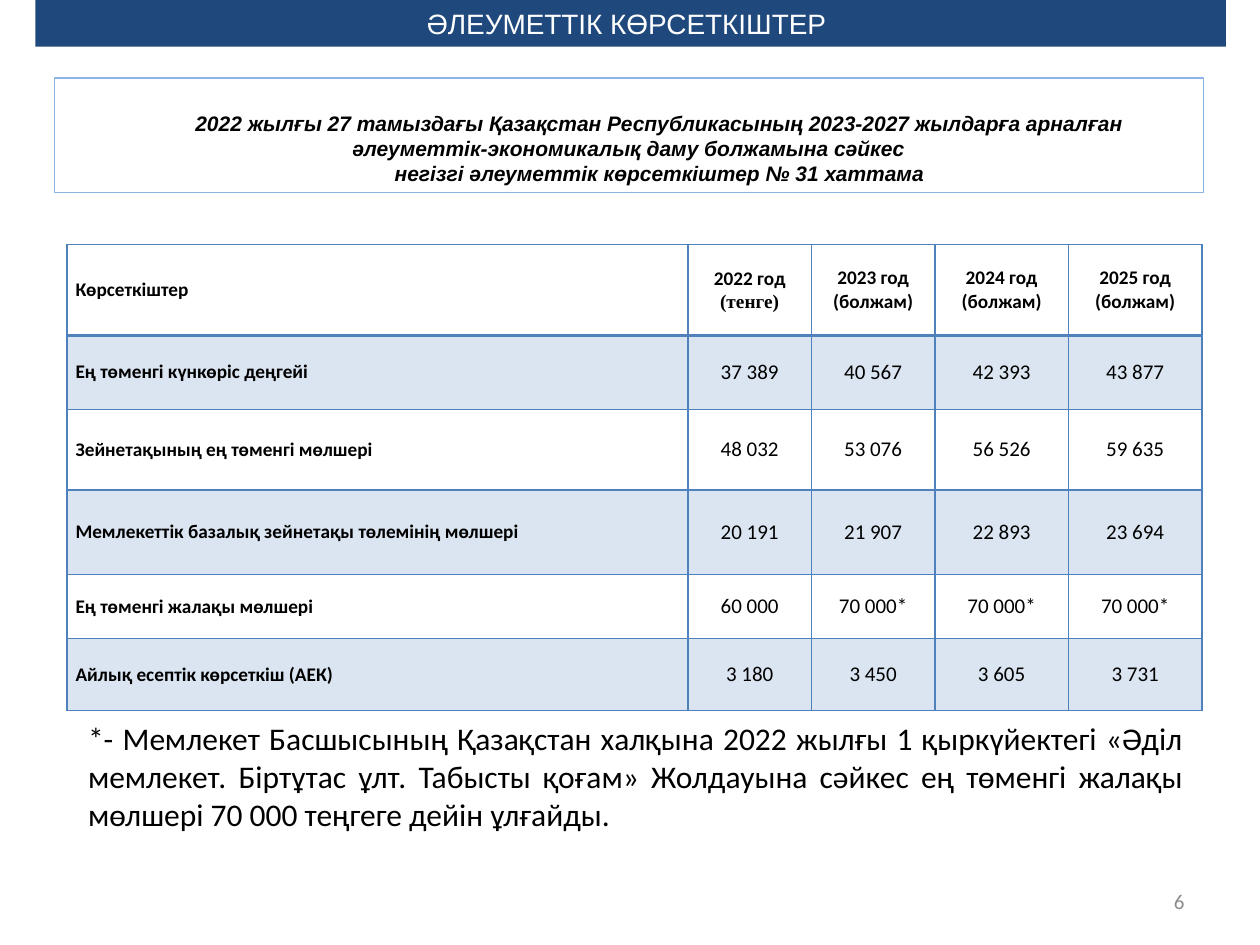
"""Build the slide of social indicators for 2022-2025."""
import lxml.etree
import pptx
import pptx.dml.color
import pptx.enum.shapes
import pptx.enum.text
import pptx.oxml.ns
import pptx.util

Inches = pptx.util.Inches
Pt = pptx.util.Pt
qn = pptx.oxml.ns.qn
Align = pptx.enum.text.PP_ALIGN
Anchor = pptx.enum.text.MSO_ANCHOR
Rectangle = pptx.enum.shapes.MSO_SHAPE.RECTANGLE

THEME = {
    "navy": "1F497D", "blue": "4F81BD", "pale": "8EB4E3",
    "black": "000000", "white": "FFFFFF", "grey": "8C8C8C",
    "title": 16, "note": 18, "body": 12, "label": 11,
}


def rgb(name):
    return pptx.dml.color.RGBColor.from_string(THEME[name])


def write(text_frame, lines, size, color="black", align=Align.LEFT, fonts=("Calibri",), **style):
    text_frame.word_wrap = True
    for index, line in enumerate(lines):
        paragraph = text_frame.paragraphs[0] if index == 0 else text_frame.add_paragraph()
        paragraph.alignment = align
        run = paragraph.add_run()
        run.text = line
        formats = {"size": Pt(THEME[size]), "name": fonts[min(index, len(fonts) - 1)], **style}
        for attribute, value in formats.items():
            setattr(run.font, attribute, value)
        run.font.color.rgb = rgb(color)


presentation = pptx.Presentation()
presentation.slide_width = Inches(10)
presentation.slide_height = Inches(7.5)
slide = presentation.slides.add_slide(presentation.slide_layouts[6])

number = slide.shapes.add_textbox(Inches(7.17), Inches(6.95), Inches(2.33), Inches(0.4))
number.text_frame.vertical_anchor = Anchor.MIDDLE
write(number.text_frame, ["6"], "body", "grey", Align.RIGHT)

banner = slide.shapes.add_shape(Rectangle, Inches(0.28), 0, Inches(9.45), Inches(0.37))
banner.shadow.inherit = False
banner.fill.solid()
banner.fill.fore_color.rgb = rgb("navy")
banner.line.fill.background()
banner.text_frame.vertical_anchor = Anchor.TOP
write(banner.text_frame, ["ӘЛЕУМЕТТІК КӨРСЕТКІШТЕР "], "title", "white", Align.CENTER, ("Arial",))

rows = [
    ("Көрсеткіштер", "2022 год\n(тенге)", "2023 год\n(болжам)", "2024 год\n(болжам)", "2025 год\n(болжам)"),
    ("Ең төменгі күнкөріс деңгейі", "37 389", "40 567", "42 393", "43 877"),
    ("Зейнетақының ең төменгі мөлшері", "48 032", "53 076", "56 526", "59 635"),
    ("Мемлекеттік базалық зейнетақы төлемінің мөлшері", "20 191", "21 907", "22 893", "23 694"),
    ("Ең төменгі жалақы мөлшері", "60 000", "70 000*", "70 000*", "70 000*"),
    ("Айлық есептік көрсеткіш (АЕК)", "3 180", "3 450", "3 605", "3 731"),
]
column_widths = [4.93, 0.98, 0.98, 1.06, 1.06]
row_heights = [0.72, 0.59, 0.64, 0.67, 0.51, 0.57]
frame = slide.shapes.add_table(
    len(rows), len(column_widths), Inches(0.53), Inches(1.94), Inches(9.02), Inches(3.7))
table = frame.table
table.horz_banding = False
for column, width in zip(table.columns, column_widths):
    column.width = Inches(width)
for row, height in zip(table.rows, row_heights):
    row.height = Inches(height)

cell_format = {
    "vertical_anchor": Anchor.MIDDLE, "margin_left": Inches(0.07), "margin_right": Inches(0.07),
    "margin_top": 0, "margin_bottom": 0,
}
for row_index, values in enumerate(rows):
    for column_index, value in enumerate(values):
        cell = table.cell(row_index, column_index)
        for attribute, setting in cell_format.items():
            setattr(cell, attribute, setting)
        heading = row_index == 0 or column_index == 0
        write(
            cell.text_frame, value.split("\n"), "label" if heading else "body",
            align=Align.CENTER if column_index else Align.LEFT,
            fonts=("Calibri", "Times New Roman" if column_index == 1 else "Calibri"), bold=heading)
        properties = cell._tc.get_or_add_tcPr()
        for side in ("lnL", "lnR", "lnT", "lnB"):
            thick = (row_index, side) in ((0, "lnB"), (1, "lnT"))
            border = lxml.etree.SubElement(properties, qn(f"a:{side}"), w=str(Pt(2 if thick else 1)))
            border_fill = lxml.etree.SubElement(border, qn("a:solidFill"))
            lxml.etree.SubElement(border_fill, qn("a:srgbClr"), val=THEME["blue"])
        if row_index % 2:
            cell.fill.solid()
            cell.fill.fore_color.rgb = rgb("blue")
            tint = properties.find(qn("a:solidFill")).find(qn("a:srgbClr"))
            lxml.etree.SubElement(tint, qn("a:alpha"), val="20000")
        else:
            cell.fill.background()

heading_box = slide.shapes.add_shape(Rectangle, Inches(0.43), Inches(0.62), Inches(9.12), Inches(0.91))
heading_box.shadow.inherit = False
heading_box.fill.background()
heading_box.line.color.rgb = rgb("pale")
heading_box.line.width = Pt(0.75)
heading_box.text_frame.vertical_anchor = Anchor.MIDDLE
heading_box.text_frame.margin_top = Inches(0.25)
write(
    heading_box.text_frame,
    ["2022 жылғы 27 тамыздағы Қазақстан Республикасының 2023-2027 жылдарға арналған "
     "әлеуметтік-экономикалық даму болжамына сәйкес",
     "негізгі әлеуметтік көрсеткіштер № 31 хаттама"],
    "body", align=Align.CENTER, fonts=("Arial",), bold=True, italic=True)
for paragraph in heading_box.text_frame.paragraphs:
    paragraph._p.get_or_add_pPr().set("indent", str(Inches(0.49)))

note = slide.shapes.add_textbox(Inches(0.6), Inches(5.66), Inches(8.89), Inches(1.01))
write(
    note.text_frame,
    ["*- Мемлекет Басшысының Қазақстан халқына 2022 жылғы 1 қыркүйектегі «Әділ мемлекет. "
     "Біртұтас ұлт. Табысты қоғам» Жолдауына сәйкес ең төменгі жалақы мөлшері 70 000 теңгеге "
     "дейін ұлғайды."],
    "note", align=Align.JUSTIFY)

presentation.save("out.pptx")
